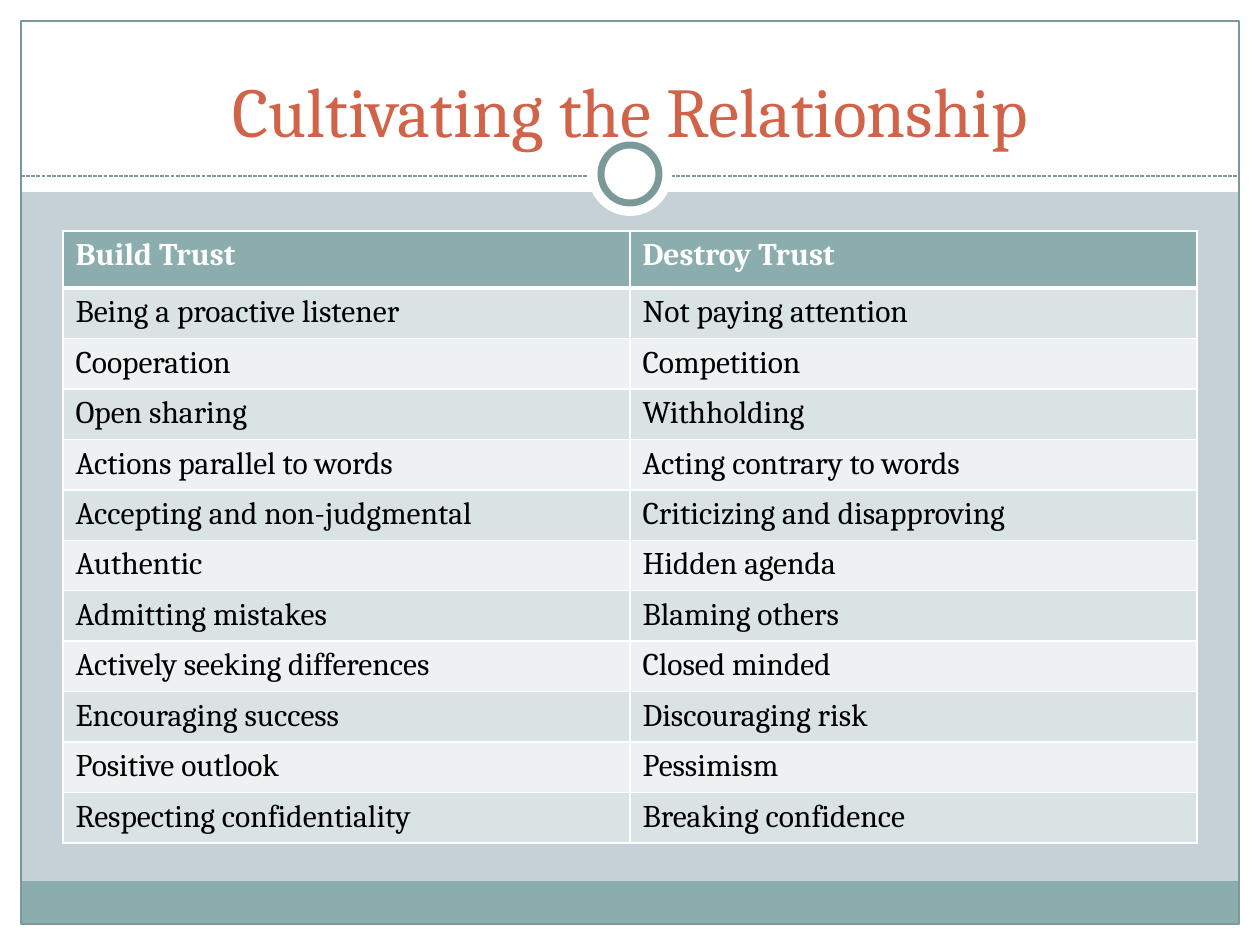
from dataclasses import dataclass

from lxml import etree
from pptx import Presentation
from pptx.dml.color import RGBColor
from pptx.enum.dml import MSO_LINE
from pptx.enum.shapes import MSO_CONNECTOR, MSO_SHAPE
from pptx.enum.text import MSO_ANCHOR, PP_ALIGN
from pptx.oxml.ns import qn
from pptx.util import Emu, Pt

RECT, OVAL = MSO_SHAPE.RECTANGLE, MSO_SHAPE.OVAL
STRAIGHT = MSO_CONNECTOR.STRAIGHT
DASH = MSO_LINE.SQUARE_DOT
LEFT, CENTER = PP_ALIGN.LEFT, PP_ALIGN.CENTER
BOTTOM = MSO_ANCHOR.BOTTOM

PX_PER_INCH = 126
WIDTH, HEIGHT = 1260, 945
MARGIN = 21
TOP_BAND = 192
FOOTER = 43
RULE_Y = 176
RING_Y = 174
TABLE_X, TABLE_Y, COLUMN = 63, 231, 567
HEADER_ROW, BODY_ROW = 57, 49

ROWS = [
    ("Build Trust", "Destroy Trust"),
    ("Being a proactive listener", "Not paying attention"),
    ("Cooperation", "Competition"),
    ("Open sharing", "Withholding"),
    ("Actions parallel to words", "Acting contrary to words"),
    ("Accepting and non-judgmental", "Criticizing and disapproving"),
    ("Authentic", "Hidden agenda"),
    ("Admitting mistakes", "Blaming others"),
    ("Actively seeking differences", "Closed minded"),
    ("Encouraging success", "Discouraging risk"),
    ("Positive outlook", "Pessimism"),
    ("Respecting confidentiality", "Breaking confidence"),
]


@dataclass(frozen=True)
class Theme:
    font: str = "Cambria"
    title_size: int = 40
    table_size: int = 18
    background: str = "C5D1D7"
    white: str = "FFFFFF"
    black: str = "000000"
    accent: str = "8CADAE"
    outline: str = "7C999A"
    title: str = "D16349"
    bands: tuple = ("DAE3E3", "EEF1F2")


def px(n):
    return Emu(n * 914400 // PX_PER_INCH)


def rgb(color):
    return RGBColor.from_string(color)


def write(tf, text, *, font, size, color, bold=False, align=LEFT):
    p = tf.paragraphs[0]
    p.alignment = align
    r = p.add_run()
    r.text = text
    r.font.name = font
    r.font.size = Pt(size)
    r.font.bold = bold
    r.font.color.rgb = rgb(color)


class Deck:
    def __init__(self, theme):
        self.theme = theme
        self.prs = Presentation()
        self.prs.slide_width, self.prs.slide_height = px(WIDTH), px(HEIGHT)
        self.s = None

    def add_slide(self):
        self.s = self.prs.slides.add_slide(self.prs.slide_layouts[6])
        fill = self.s.background.fill
        fill.solid()
        fill.fore_color.rgb = rgb(self.theme.background)

    def shape(self, kind, x, y, w, h, fill=None, line=None, weight=0.75):
        sp = self.s.shapes.add_shape(kind, px(x), px(y), px(w), px(h))
        sp.shadow.inherit = False
        if fill:
            sp.fill.solid()
            sp.fill.fore_color.rgb = rgb(fill)
        else:
            sp.fill.background()
        if line:
            sp.line.color.rgb = rgb(line)
            sp.line.width = Pt(weight)
        else:
            sp.line.fill.background()

    def circle(self, cx, cy, d, **style):
        self.shape(OVAL, cx - d // 2, cy - d // 2, d, d, **style)

    def dashed_line(self, x1, y1, x2, y2):
        cn = self.s.shapes.add_connector(STRAIGHT, px(x1), px(y1), px(x2), px(y2))
        cn.line.color.rgb = rgb(self.theme.outline)
        cn.line.width = Pt(0.75)
        cn.line.dash_style = DASH
        etree.SubElement(cn._element.spPr, qn("a:effectLst"))

    def title(self, text, x, y, w, h):
        tf = self.s.shapes.add_textbox(px(x), px(y), px(w), px(h)).text_frame
        tf.word_wrap = True
        tf.vertical_anchor = BOTTOM
        write(tf, text, font=self.theme.font, size=self.theme.title_size,
              color=self.theme.title, align=CENTER)

    def borders(self, cell, **weights):
        tcPr = cell._tc.get_or_add_tcPr()
        for i, (side, weight) in enumerate(weights.items()):
            ln = etree.Element(qn(f"a:ln{side}"), w=str(Pt(weight)))
            fill = etree.SubElement(ln, qn("a:solidFill"))
            etree.SubElement(fill, qn("a:srgbClr"), val=self.theme.white)
            tcPr.insert(i, ln)

    def table(self, rows, x, y, column, header, body):
        t = self.theme
        heights = [header] + [body] * (len(rows) - 1)
        cols = len(rows[0])
        table = self.s.shapes.add_table(
            len(rows), cols, px(x), px(y), px(column * cols), px(sum(heights))
        ).table
        for col in table.columns:
            col.width = px(column)
        for i, (values, height) in enumerate(zip(rows, heights)):
            head = i == 0
            table.rows[i].height = px(height)
            for cell, text in zip(table.rows[i].cells, values):
                cell.fill.solid()
                cell.fill.fore_color.rgb = rgb(t.accent if head else t.bands[(i - 1) % 2])
                self.borders(cell, L=1, R=1, T=3 if i == 1 else 1, B=3 if head else 1)
                write(cell.text_frame, text, font=t.font, size=t.table_size,
                      color=t.white if head else t.black, bold=head)


def main():
    theme = Theme()
    deck = Deck(theme)
    deck.add_slide()
    right, bottom = WIDTH - MARGIN, HEIGHT - MARGIN
    inner_w, inner_h = right - MARGIN, bottom - MARGIN
    for box in (
        (0, bottom, WIDTH, MARGIN),
        (0, 0, WIDTH, TOP_BAND),
        (0, 0, MARGIN, HEIGHT),
        (right, 0, MARGIN, HEIGHT),
    ):
        deck.shape(RECT, *box, fill=theme.white)
    deck.shape(RECT, MARGIN, bottom - FOOTER, inner_w, FOOTER, fill=theme.accent)
    deck.shape(RECT, MARGIN, MARGIN, inner_w, inner_h, line=theme.outline)
    deck.dashed_line(MARGIN, RULE_Y, right, RULE_Y)
    deck.circle(WIDTH // 2, RING_Y, 84, fill=theme.white)
    deck.circle(WIDTH // 2, RING_Y, 58, fill=theme.white, line=theme.outline, weight=4)
    deck.title("Cultivating the Relationship", TABLE_X, 38, 2 * COLUMN, 120)
    deck.table(ROWS, TABLE_X, TABLE_Y, COLUMN, HEADER_ROW, BODY_ROW)
    deck.prs.save("out.pptx")


if __name__ == "__main__":
    main()
